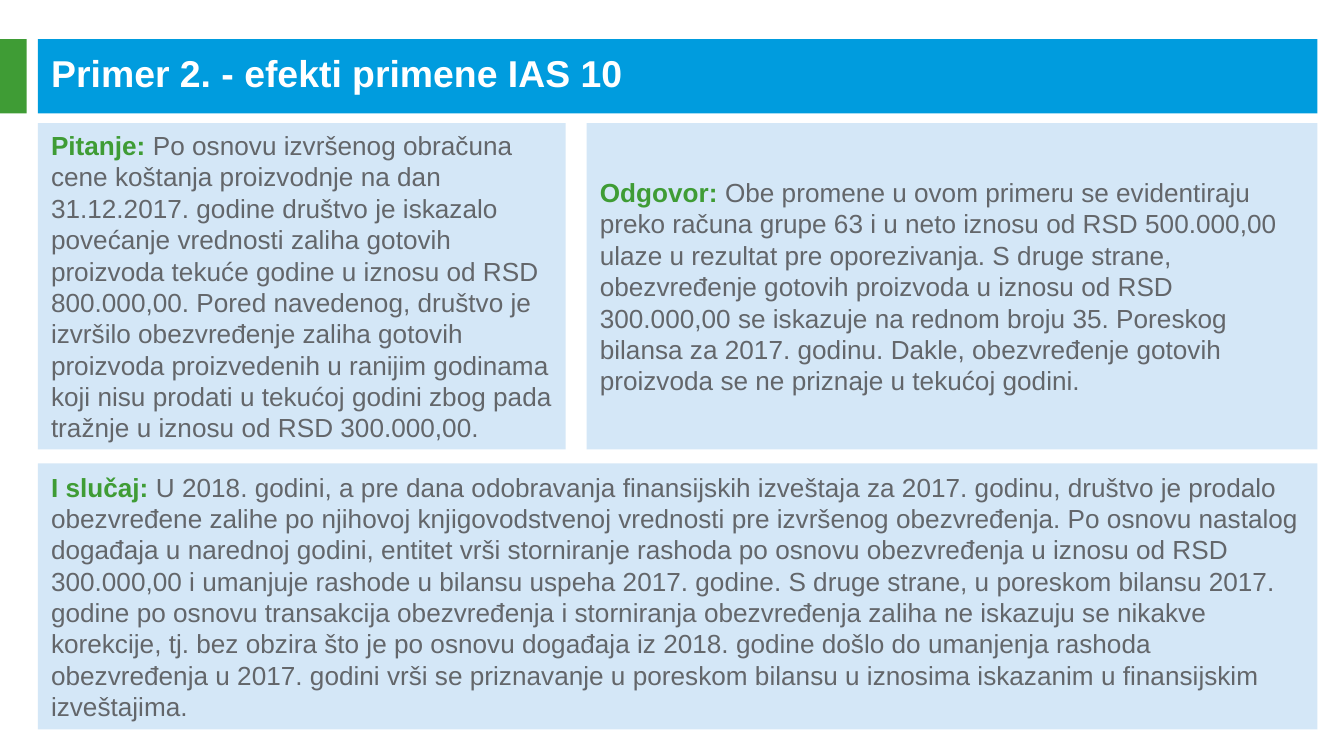
from pptx import Presentation
from pptx import util as u
from pptx.dml.color import RGBColor
from pptx.enum import shapes, text

PX = u.Inches(1) // 96
BLUE, GREEN, PALE, GREY, WHITE = "009CDE", "3F9C35", "D4E7F7", "63666A", "FFFFFF"
LEFT, RIGHT, GAP = 27, 941, 15

QUESTION = (
    "Po osnovu izvršenog obračuna cene koštanja proizvodnje na dan 31.12.2017. godine "
    "društvo je iskazalo povećanje vrednosti zaliha gotovih proizvoda tekuće godine u "
    "iznosu od RSD 800.000,00. Pored navedenog, društvo je izvršilo obezvređenje zaliha "
    "gotovih proizvoda proizvedenih u ranijim godinama koji nisu prodati u tekućoj godini "
    "zbog pada tražnje u iznosu od RSD 300.000,00.")
ANSWER = (
    "Obe promene u ovom primeru se evidentiraju preko računa grupe 63 i u neto iznosu od "
    "RSD 500.000,00 ulaze u rezultat pre oporezivanja. S druge strane, obezvređenje gotovih "
    "proizvoda u iznosu od RSD 300.000,00 se iskazuje na rednom broju 35. Poreskog bilansa "
    "za 2017. godinu. Dakle, obezvređenje gotovih proizvoda se ne priznaje u tekućoj godini.")
CASE = (
    "U 2018. godini, a pre dana odobravanja finansijskih izveštaja za 2017. godinu, društvo "
    "je prodalo obezvređene zalihe po njihovoj knjigovodstvenoj vrednosti pre izvršenog "
    "obezvređenja. Po osnovu nastalog događaja u narednoj godini, entitet vrši storniranje "
    "rashoda po osnovu obezvređenja u iznosu od RSD 300.000,00 i umanjuje rashode u bilansu "
    "uspeha 2017. godine. S druge strane, u poreskom bilansu 2017. godine po osnovu "
    "transakcija obezvređenja i storniranja obezvređenja zaliha ne iskazuju se nikakve "
    "korekcije, tj. bez obzira što je po osnovu događaja iz 2018. godine došlo do umanjenja "
    "rashoda obezvređenja u 2017. godini vrši se priznavanje u poreskom bilansu u iznosima "
    "iskazanim u finansijskim izveštajima.")


def color(value):
    return RGBColor.from_string(value)


def apply(target, formats):
    for name, value in formats.items():
        setattr(target, name, value)


def add_rectangle(page, left, top, width, height, fill):
    box = page.shapes.add_shape(shapes.MSO_SHAPE.RECTANGLE,
                                *(n * PX for n in (left, top, width, height)))
    box.shadow.inherit = False
    box.fill.solid()
    box.fill.fore_color.rgb = color(fill)
    box.line.fill.background()
    return box


def write(box, spans, size):
    """Fill the box with one paragraph of (wording, colour, bold) spans."""
    frame = box.text_frame
    apply(frame, {"word_wrap": True, "auto_size": text.MSO_AUTO_SIZE.NONE,
                  "vertical_anchor": text.MSO_ANCHOR.MIDDLE})
    para = frame.paragraphs[0]
    apply(para, {"alignment": text.PP_ALIGN.LEFT, "line_spacing": 1.0,
                 "space_before": u.Pt(0)})
    for wording, tint, bold in spans:
        span = para.add_run()
        span.text = wording
        apply(span.font, {"name": "Arial", "size": u.Pt(size), "bold": bold})
        span.font.color.rgb = color(tint)


def add_header(page, left, top, width, height, wording):
    add_rectangle(page, left, top, width, height, BLUE)
    add_rectangle(page, 0, top, left - 8, height, GREEN)
    title = page.shapes.title
    apply(title, {"left": left * PX, "top": (top + 9) * PX,
                  "width": (width - 15) * PX, "height": 29 * PX})
    # Bring the placeholder in front of the bar
    page.shapes.element.append(title.element)
    write(title, [(wording, WHITE, True)], 20)


def add_panel(page, left, top, width, height, label, wording):
    box = add_rectangle(page, left, top, width, height, PALE)
    write(box, [(label + " ", GREEN, True), (wording, GREY, False)], 14)


def main():
    deck = Presentation()
    deck.slide_width, deck.slide_height = 960 * PX, 540 * PX
    page = deck.slides.add_slide(deck.slide_layouts[5])
    width = RIGHT - LEFT
    question_width = 377
    answer_left = LEFT + question_width + GAP
    add_header(page, LEFT, 28, width, 53, "Primer 2. - efekti primene IAS 10")
    add_panel(page, LEFT, 88, question_width, 233, "Pitanje:", QUESTION)
    add_panel(page, answer_left, 88, RIGHT - answer_left, 233, "Odgovor:", ANSWER)
    add_panel(page, LEFT, 331, width, 190, "I slučaj:", CASE)
    deck.save("out.pptx")


if __name__ == "__main__":
    main()
